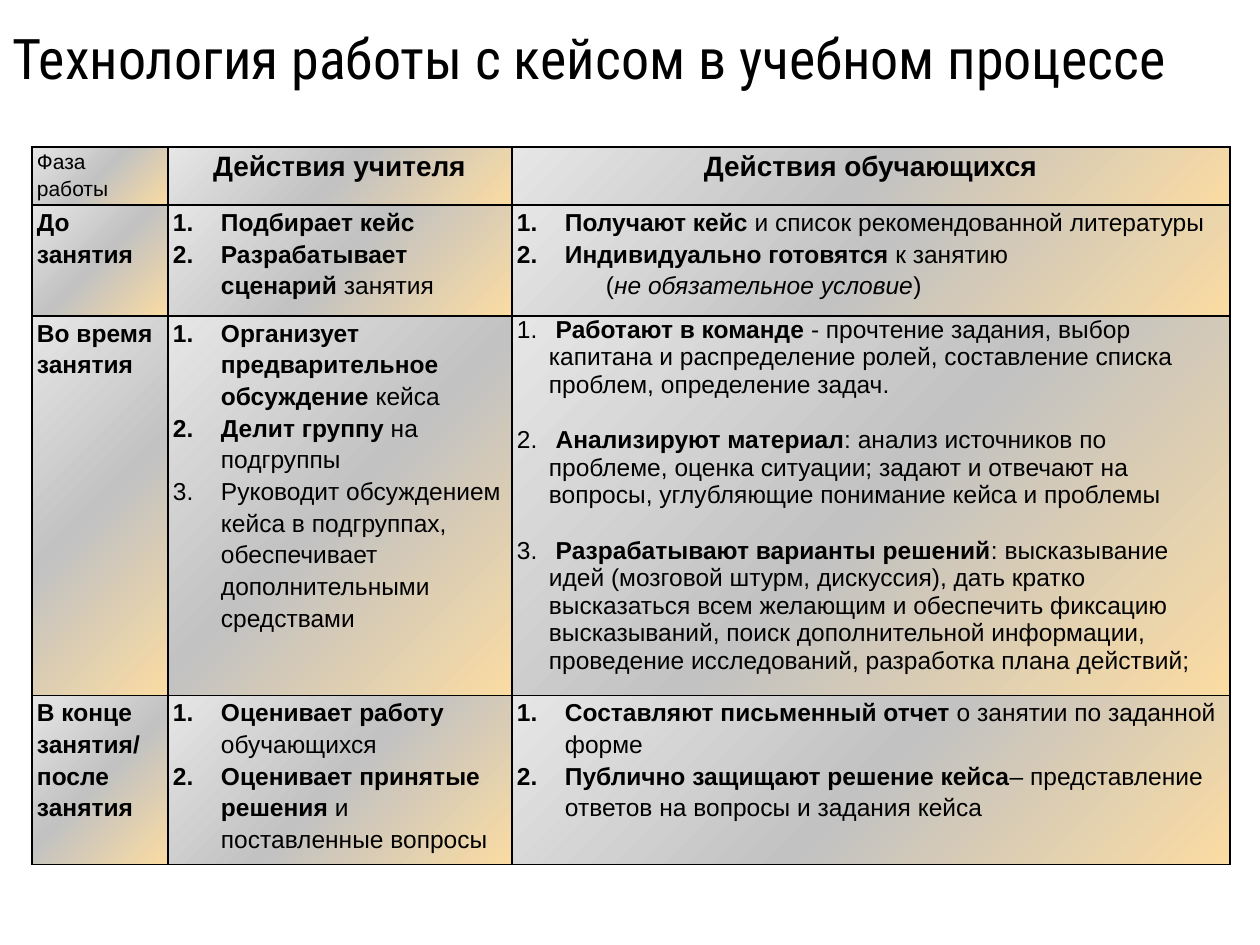
from pptx import Presentation
from pptx.dml.color import RGBColor
from pptx.enum.text import MSO_ANCHOR, PP_ALIGN
from pptx.oxml import parse_xml
from pptx.oxml.ns import nsdecls
from pptx.util import Emu, Pt

BLACK = RGBColor(0x00, 0x00, 0x00)
SAND = RGBColor(0xFA, 0xDB, 0xA2)
GRAY = RGBColor(0xC2, 0xC2, 0xC2)
LIGHT = RGBColor(0xE6, 0xE6, 0xE6)
GRADIENT = ((0, SAND), (50, GRAY), (100, LIGHT))

PLAIN = {"spacing": 1.15}
HEADER = {"spacing": 1.15, "size": 16, "align": PP_ALIGN.CENTER}
PHASE_HEADER = {"spacing": 1.15, "size": 12}
NUMBERED = {"spacing": 1.15, "indent": 48, "numbered": True}
NOTE = {"spacing": 1.15, "indent": 89}
STEP = {"spacing": 1.0, "indent": 32, "numbered": True}
NEXT_STEP = {**STEP, "before": 16}

COLUMNS = (136, 344, 718)
ROWS = (
    (55, (
        [(PHASE_HEADER, [("Фаза работы", "")])],
        [(HEADER, [("Действия учителя", "b")])],
        [(HEADER, [("Действия обучающихся", "b")])],
    )),
    (111, (
        [(PLAIN, [("До занятия", "b")])],
        [(NUMBERED, [("Подбирает кейс", "b")]),
         (NUMBERED, [("Разрабатывает сценарий ", "b"), ("занятия", "")])],
        [(NUMBERED, [("Получают кейс ", "b"), ("и список рекомендованной литературы", "")]),
         (NUMBERED, [("Индивидуально готовятся ", "b"), ("к занятию", "")]),
         (NOTE, [("(", ""), ("не обязательное условие", "i"), (")", "")])],
    )),
    (358, (
        [(PLAIN, [("Во время занятия", "b")])],
        [(NUMBERED, [("Организует предварительное обсуждение ", "b"), ("кейса", "")]),
         (NUMBERED, [("Делит группу ", "b"), ("на подгруппы", "")]),
         (NUMBERED, [("Руководит обсуждением кейса в подгруппах, обеспечивает "
                      "дополнительными средствами", "")])],
        [(STEP, [(" ", ""), ("Работают в команде ", "b"),
                 ("- прочтение задания, выбор капитана и распределение ролей, "
                  "составление списка проблем, определение задач.", "")]),
         (NEXT_STEP, [(" ", ""), ("Анализируют материал", "b"),
                      (": анализ источников по проблеме, оценка ситуации; задают и отвечают "
                       "на вопросы, углубляющие понимание кейса и проблемы", "")]),
         (NEXT_STEP, [(" ", ""), ("Разрабатывают варианты решений", "b"),
                      (": высказывание идей (мозговой штурм, дискуссия), дать кратко "
                       "высказаться всем желающим и обеспечить фиксацию высказываний, "
                       "поиск дополнительной информации, проведение исследований, "
                       "разработка плана действий;", "")])],
    )),
    (158, (
        [(PLAIN, [("В конце занятия/ после занятия", "b")])],
        [(NUMBERED, [("Оценивает работу ", "b"), ("обучающихся", "")]),
         (NUMBERED, [("Оценивает принятые решения", "b"), (" и поставленные вопросы", "")])],
        [(NUMBERED, [("Составляют письменный отчет ", "b"), ("о занятии по заданной форме", "")]),
         (NUMBERED, [("Публично защищают решение кейса", "b"),
                     ("– представление ответов на вопросы и задания кейса", "")])],
    )),
)


def px(value):
    return Emu(round(value * 914400 / 126))


class SlideBuilder:
    """Draws the title and the table of lesson phases on one slide."""

    title_font = "Roboto Condensed"
    body_font = "Arial"
    body_size = 14

    def __init__(self, slide):
        self.slide = slide

    def title(self, text, left, top, width, height):
        shape = self.slide.shapes.add_textbox(px(left), px(top), px(width), px(height))
        text_frame = shape.text_frame
        text_frame.word_wrap = True
        text_frame.vertical_anchor = MSO_ANCHOR.MIDDLE
        text_frame.text = text
        font = text_frame.paragraphs[0].runs[0].font
        font.name, font.size = self.title_font, Pt(32)
        font.color.rgb = BLACK

    def table(self, left, top, columns, rows):
        height = sum(row_height for row_height, _ in rows)
        frame = self.slide.shapes.add_table(
            len(rows), len(columns), px(left), px(top), px(sum(columns)), px(height))
        table = frame.table
        for column, width in zip(table.columns, columns):
            column.width = px(width)
        for row, (row_height, contents) in zip(table.rows, rows):
            row.height = px(row_height)
            for cell, paragraphs in zip(row.cells, contents):
                self.cell(cell, paragraphs)

    def cell(self, cell, paragraphs):
        cell.margin_left, cell.margin_right = px(5), px(6)
        cell.margin_top = cell.margin_bottom = 0
        self.cell_look(cell)
        text_frame = cell.text_frame
        for index, (style, runs) in enumerate(paragraphs):
            paragraph = text_frame.add_paragraph() if index else text_frame.paragraphs[0]
            self.paragraph(paragraph, style, runs)

    def cell_look(self, cell):
        properties = cell._tc.get_or_add_tcPr()
        for side in "LRTB":
            properties.append(parse_xml(
                f'<a:ln{side} {nsdecls("a")} w="{Pt(1)}"><a:solidFill>'
                f'<a:srgbClr val="{BLACK}"/></a:solidFill></a:ln{side}>'))
        stops = "".join(
            f'<a:gs pos="{position * 1000}"><a:srgbClr val="{color}"/></a:gs>'
            for position, color in GRADIENT)
        properties.append(parse_xml(
            f'<a:gradFill {nsdecls("a")} rotWithShape="1"><a:gsLst>{stops}</a:gsLst>'
            '<a:path path="circle"><a:fillToRect l="100000" t="100000"/></a:path>'
            '</a:gradFill>'))

    def paragraph(self, paragraph, style, runs):
        paragraph.alignment = style.get("align", PP_ALIGN.LEFT)
        paragraph.line_spacing = style["spacing"]
        if "before" in style:
            paragraph.space_before = Pt(style["before"])
        properties = paragraph._p.get_or_add_pPr()
        indent = px(style.get("indent", 0))
        properties.set("marL", str(indent))
        if style.get("numbered"):
            properties.set("indent", str(-indent))
            properties.append(parse_xml(
                f'<a:buAutoNum {nsdecls("a")} type="arabicPeriod"/>'))
        for text, emphasis in runs:
            run = paragraph.add_run()
            run.text = text
            font = run.font
            font.name, font.size = self.body_font, Pt(style.get("size", self.body_size))
            font.bold, font.italic = emphasis == "b", emphasis == "i"
            font.color.rgb = BLACK


def main():
    presentation = Presentation()
    presentation.slide_width, presentation.slide_height = px(1260), px(945)
    slide = presentation.slides.add_slide(presentation.slide_layouts[6])
    builder = SlideBuilder(slide)
    builder.title("Технология работы с кейсом в учебном процессе", 0, 21, 1240, 73)
    builder.table(32, 147, COLUMNS, ROWS)
    presentation.save("out.pptx")


if __name__ == "__main__":
    main()
